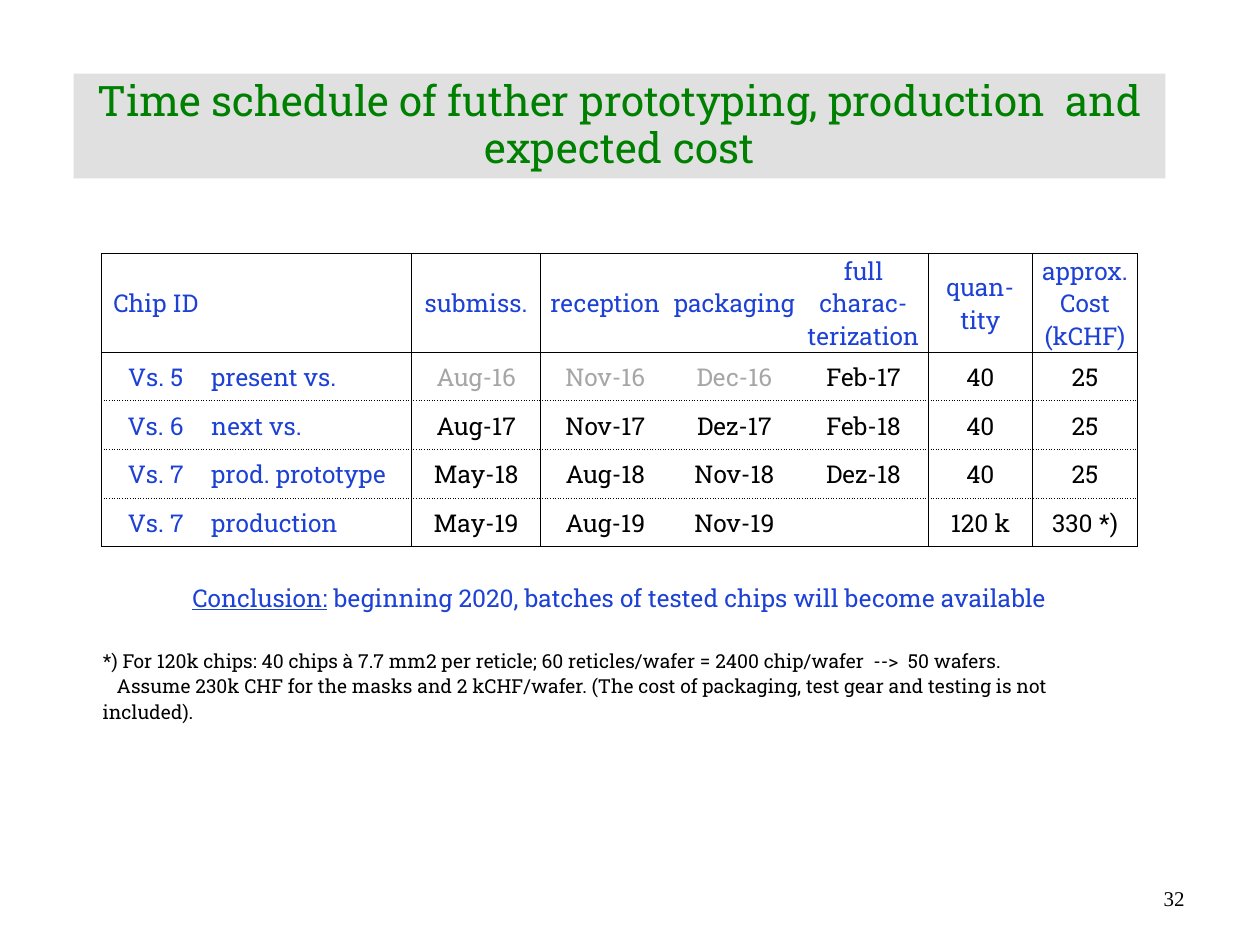
from copy import deepcopy
from dataclasses import dataclass

from lxml import etree
from pptx import Presentation
from pptx.dml.color import RGBColor
from pptx.enum.text import MSO_ANCHOR, MSO_AUTO_SIZE, PP_ALIGN
from pptx.oxml.ns import qn
from pptx.util import Pt

LEFT, CENTER, RIGHT = PP_ALIGN.LEFT, PP_ALIGN.CENTER, PP_ALIGN.RIGHT
MIDDLE = MSO_ANCHOR.MIDDLE
NO_AUTOFIT = MSO_AUTO_SIZE.NONE
PLAIN_TABLE_STYLE = "{2D5ABB26-0587-4C30-8999-92F81FD0307C}"


@dataclass(frozen=True)
class Theme:
    heading: str = "008000"
    band: str = "C0C0C0"
    label: str = "1D41D5"
    past: str = "A6A6A6"
    ink: str = "000000"
    font: str = "Roboto Slab"
    number_font: str = "Times New Roman"
    title_size: float = 24
    table_size: float = 14
    number_size: float = 12
    note_size: float = 11


THEME = Theme()

HEADINGS = ["Chip ID", "", "submiss.", "reception", "packaging",
            "full charac-\nterization", "quan-\ntity", "approx. Cost (kCHF)"]
SCHEDULE = [
    ["Vs. 5", "present vs.", "Aug-16", "Nov-16", "Dec-16", "Feb-17", "40", "25"],
    ["Vs. 6", "next vs.", "Aug-17", "Nov-17", "Dez-17", "Feb-18", "40", "25"],
    ["Vs. 7", "prod. prototype", "May-18", "Aug-18", "Nov-18", "Dez-18", "40", "25"],
    ["Vs. 7", "production", "May-19", "Aug-19", "Nov-19", "", "120 k", "330 *)"],
]
CONCLUSION = ["Conclusion:", " beginning 2020, batches of tested chips will become available"]
FOOTNOTE = [
    "*) For 120k chips: 40 chips à 7.7 mm2 per reticle; 60 reticles/wafer = 2400 chip/wafer  -->  50 wafers.",
    "Assume 230k CHF for the masks and 2 kCHF/wafer. (The cost of packaging, test gear and testing is not included).",
]
COLUMN_WIDTHS = [62, 115.2] + [73.8] * 4 + [59.8] * 2
ROW_HEIGHTS = [54.6] + [27.8] * 4 + [17.5, 22.5, 17.5, 43]
CONCLUSION_ROW, FOOTNOTE_ROW = 6, 8
GROUP_STARTS, GROUP_ENDS = (0, 2, 6), (1, 5, 7)
PAST_DATES = (2, 3, 4)
FOOTNOTE_INDENT = 8


def set_all(target, values):
    for attribute, value in values.items():
        setattr(target, attribute, value)


def write(paragraph, text, color, size, font=THEME.font, align=LEFT, underline=False):
    paragraph.alignment = align
    for position, line in enumerate(text.split("\n")):
        if position:
            paragraph.add_line_break()
        run = paragraph.add_run()
        run.text = line
        set_all(run.font, {"name": font, "size": Pt(size), "underline": underline})
        run.font.color.rgb = RGBColor.from_string(color)
        if position:
            line_break = run._r.getprevious()
            line_break.insert(0, deepcopy(run._r.rPr))


def add_title(slide, left, top, width, height):
    title = slide.shapes.title
    set_all(title, {"left": Pt(left), "top": Pt(top), "width": Pt(width), "height": Pt(height)})
    title.fill.solid()
    title.fill.fore_color.rgb = RGBColor.from_string(THEME.band)
    band_color = title.fill._xPr.find(qn("a:solidFill"))[0]
    etree.SubElement(band_color, qn("a:alpha"), val="49000")
    frame = title.text_frame
    set_all(frame, {"word_wrap": True, "auto_size": NO_AUTOFIT, "vertical_anchor": MIDDLE})
    heading = frame.paragraphs[0]
    heading.line_spacing = 0.92
    write(heading, "Time schedule of futher prototyping, production  and expected cost",
          THEME.heading, THEME.title_size, align=CENTER)


def add_border(cell, side, dash):
    border = etree.SubElement(cell._tc.get_or_add_tcPr(), qn("a:ln" + side), w=str(Pt(0.5)))
    fill = etree.SubElement(border, qn("a:solidFill"))
    etree.SubElement(fill, qn("a:srgbClr"), val=THEME.ink)
    etree.SubElement(border, qn("a:prstDash"), val=dash)


def border_schedule_cell(cell, row, column):
    last = len(SCHEDULE)
    if column in GROUP_STARTS:
        add_border(cell, "L", "solid")
    if column in GROUP_ENDS:
        add_border(cell, "R", "solid")
    add_border(cell, "T", "solid" if row <= 1 else "sysDot")
    add_border(cell, "B", "solid" if row in (0, last) else "sysDot")


def schedule_color(row, column):
    if row == 0 or column < 2:
        return THEME.label
    return THEME.past if row == 1 and column in PAST_DATES else THEME.ink


def format_cell(cell):
    set_all(cell, {"margin_left": Pt(0.72), "margin_right": Pt(0.72), "margin_top": Pt(0.72),
                   "margin_bottom": 0, "vertical_anchor": MIDDLE})
    cell.fill.background()
    paragraph = cell.text_frame.paragraphs[0]
    if not paragraph.runs:
        etree.SubElement(paragraph._p, qn("a:endParaRPr"), sz=str(THEME.note_size * 100))


def add_schedule(slide, left, top):
    frame = slide.shapes.add_table(len(ROW_HEIGHTS), len(COLUMN_WIDTHS), Pt(left), Pt(top),
                                   Pt(sum(COLUMN_WIDTHS)), Pt(sum(ROW_HEIGHTS)))
    schedule = frame.table
    set_all(schedule, {"first_row": False, "horz_banding": False})
    schedule._tbl.tblPr.find(qn("a:tableStyleId")).text = PLAIN_TABLE_STYLE
    for column, width in zip(schedule.columns, COLUMN_WIDTHS):
        column.width = Pt(width)
    for row, height in zip(schedule.rows, ROW_HEIGHTS):
        row.height = Pt(height)

    for row, entries in enumerate([HEADINGS] + SCHEDULE):
        for column, entry in enumerate(entries):
            cell = schedule.cell(row, column)
            border_schedule_cell(cell, row, column)
            if entry:
                write(cell.text_frame.paragraphs[0], entry, schedule_color(row, column),
                      THEME.table_size, align=LEFT if column == 1 else CENTER)

    for row in (CONCLUSION_ROW, FOOTNOTE_ROW):
        schedule.cell(row, 0).merge(schedule.cell(row, len(COLUMN_WIDTHS) - 1))
    conclusion = schedule.cell(CONCLUSION_ROW, 0).text_frame.paragraphs[0]
    for part, underline in zip(CONCLUSION, (True, False)):
        write(conclusion, part, THEME.label, THEME.table_size, align=CENTER, underline=underline)

    footnote = schedule.cell(FOOTNOTE_ROW, 0).text_frame
    source, assumption = footnote.paragraphs[0], footnote.add_paragraph()
    for paragraph, text in zip((source, assumption), FOOTNOTE):
        write(paragraph, text, THEME.ink, THEME.note_size)
    assumption._p.get_or_add_pPr().set("indent", str(Pt(FOOTNOTE_INDENT)))

    for cell in schedule.iter_cells():
        format_cell(cell)


def add_page_number(slide, left, top, width, height):
    number = slide.shapes.add_textbox(Pt(left), Pt(top), Pt(width), Pt(height)).text_frame
    number.word_wrap = True
    write(number.paragraphs[0], "32", THEME.ink, THEME.number_size,
          font=THEME.number_font, align=RIGHT)


def main():
    deck = Presentation()
    set_all(deck, {"slide_width": Pt(720), "slide_height": Pt(540)})
    slide = deck.slides.add_slide(deck.slide_layouts.get_by_name("Title Only"))
    add_title(slide, 42, 42, 624, 60)
    add_schedule(slide, 58, 144.7)
    add_page_number(slide, 643.7, 502.5, 40.3, 22.5)
    deck.save("out.pptx")


if __name__ == "__main__":
    main()
